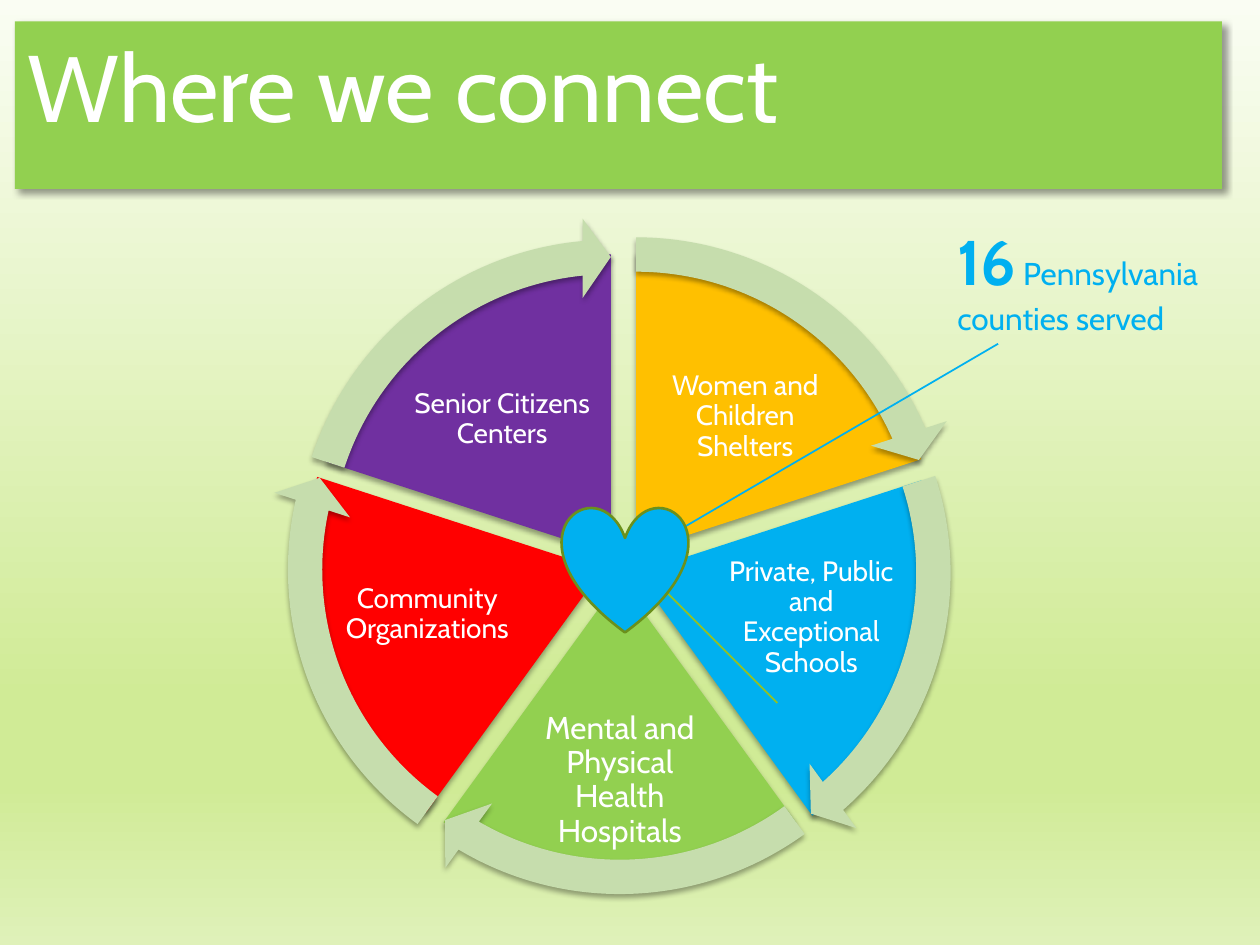
from dataclasses import dataclass

from lxml.etree import SubElement
from pptx import Presentation
from pptx.dml.color import RGBColor
from pptx.enum.shapes import MSO_CONNECTOR, MSO_SHAPE
from pptx.enum.text import MSO_ANCHOR, PP_ALIGN
from pptx.oxml.ns import qn
from pptx.util import Cm, Pt


@dataclass(frozen=True)
class Theme:
    font: str = "Cabin"
    white: str = "FFFFFF"
    green: str = "92D050"
    blue: str = "00B0F0"
    arrow: str = "C6DDAD"
    spoke: str = "90C226"
    heart_line: str = "6B901C"
    background: tuple = ((0, "FAFDF3"), (74, "D0EB96"), (83, "D0EB96"), (100, "DFF1B9"))
    title_size: int = 54
    number_size: int = 36
    text_size: int = 18
    label_size: int = 16


THEME = Theme()

# Segment offset, colour, label, label box and label size; lengths in cm within the wheel
SEGMENTS = [
    ((1.42, 0.71), "FFC000", "Women and Children Shelters",
     (7.72, 2.74, 3.89, 2.59), THEME.label_size),
    ((1.42, 1.14), THEME.blue, "Private, Public and Exceptional Schools",
     (9.19, 6.65, 3.61, 2.87), THEME.label_size),
    ((1.09, 1.27), THEME.green, "Mental and Physical Health Hospitals",
     (5.41, 9.78, 3.45, 3.18), THEME.text_size),
    ((0.74, 1.07), "FF0000", "Community Organizations",
     (1.45, 6.58, 3.61, 2.87), THEME.label_size),
    ((0.91, 0.76), "7030A0", "Senior Citizens Centers",
     (2.82, 2.79, 3.89, 2.59), THEME.label_size),
]
PIE_SIZE = 12.09
ARROW_MARGIN = 0.75
# Angles in the adjustment unit of the shapes: a full turn is 216
TURN = 216
TOP = 162
SWEEP = TURN / len(SEGMENTS)
HEAD_SWEEP = 3.275


def rgb(color):
    return RGBColor.from_string(color)


def style_run(r, size, color, bold=False):
    r.font.name = THEME.font
    r.font.size = Pt(size)
    r.font.bold = bold
    r.font.color.rgb = rgb(color)


def paint_background(s):
    fill = s.background.fill
    fill.gradient()
    fill.gradient_angle = 270
    stops = s.background._cSld.find(".//" + qn("a:gsLst"))
    stops.clear()
    for pos, color in THEME.background:
        stop = SubElement(stops, qn("a:gs"), pos=str(pos * 1000))
        SubElement(stop, qn("a:srgbClr"), val=color)


def add_shadow(sp, alpha, blur, distance, angle):
    sp.shadow.inherit = False
    effects = sp._element.spPr.find(qn("a:effectLst"))
    shadow = SubElement(effects, qn("a:outerShdw"), blurRad=str(Pt(blur)),
                        dist=str(Pt(distance)), dir=str(angle * 60000), rotWithShape="0")
    color = SubElement(shadow, qn("a:srgbClr"), val="000000")
    SubElement(color, qn("a:alpha"), val=str(alpha * 1000))


def add_filled(s, kind, left, top, size, color, adjustments=()):
    sp = s.shapes.add_shape(kind, Cm(left), Cm(top), Cm(size), Cm(size))
    for i, value in enumerate(adjustments):
        sp.adjustments[i] = value
    sp.fill.solid()
    sp.fill.fore_color.rgb = rgb(color)
    sp.line.fill.background()
    sp.shadow.inherit = False
    return sp


def add_line(s, x1, y1, x2, y2, color):
    line = s.shapes.add_connector(MSO_CONNECTOR.STRAIGHT, Cm(x1), Cm(y1), Cm(x2), Cm(y2))
    line.line.color.rgb = rgb(color)
    line.line.width = Pt(1)
    SubElement(line._element.spPr, qn("a:effectLst"))


def add_title(s, left, top, width, height):
    sp = s.shapes.title
    sp.left, sp.top, sp.width, sp.height = Cm(left), Cm(top), Cm(width), Cm(height)
    sp.fill.solid()
    sp.fill.fore_color.rgb = rgb(THEME.green)
    add_shadow(sp, 40, 4, 3, 45)
    tf = sp.text_frame
    tf.text = "Where we connect"
    tf.vertical_anchor = MSO_ANCHOR.TOP
    p = tf.paragraphs[0]
    p.alignment = PP_ALIGN.LEFT
    style_run(p.runs[0], THEME.title_size, THEME.white)


def add_label(s, left, top, width, height, text, size):
    tf = s.shapes.add_textbox(Cm(left), Cm(top), Cm(width), Cm(height)).text_frame
    tf.word_wrap = True
    tf.vertical_anchor = MSO_ANCHOR.MIDDLE
    tf.margin_left = tf.margin_right = tf.margin_top = tf.margin_bottom = Cm(0.05)
    tf.text = text
    p = tf.paragraphs[0]
    p.alignment = PP_ALIGN.CENTER
    p.line_spacing = 0.9
    style_run(p.runs[0], size, THEME.white)


def add_wheel(s, left, top):
    """Draw the segments with their labels, then the ring of arrows over them."""
    starts = [(TOP + i * SWEEP) % TURN for i in range(len(SEGMENTS))]
    for start, ((dx, dy), color, text, (x, y, w, h), size) in zip(starts, SEGMENTS):
        pie = add_filled(s, MSO_SHAPE.PIE, left + dx, top + dy, PIE_SIZE, color,
                         (start, (start + SWEEP) % TURN))
        add_shadow(pie, 35, 3, 2, 90)
        add_label(s, left + x, top + y, w, h, text, size)
    for start, ((dx, dy), *_) in zip(starts, SEGMENTS):
        end = (start + SWEEP - HEAD_SWEEP) % TURN
        arrow = add_filled(s, MSO_SHAPE.CIRCULAR_ARROW, left + dx - ARROW_MARGIN,
                           top + dy - ARROW_MARGIN, PIE_SIZE + 2 * ARROW_MARGIN,
                           THEME.arrow, (0.051, HEAD_SWEEP, end, start, 0.059))
        add_shadow(arrow, 35, 3, 2, 90)


def add_callout(s, left, top, width, height):
    add_line(s, left - 6.55, top + 7.01, left + 1.07, top + 2.56, THEME.blue)
    tf = s.shapes.add_textbox(Cm(left), Cm(top), Cm(width), Cm(height)).text_frame
    tf.word_wrap = True
    p = tf.paragraphs[0]
    for text, size, bold in (("16", THEME.number_size, True),
                             (" Pennsylvania counties served", THEME.text_size, False)):
        r = p.add_run()
        r.text = text
        style_run(r, size, THEME.blue, bold)


def add_heart(s, left, top, size):
    add_line(s, left + 1.8, top + 1.42, left + 4.34, top + 3.96, THEME.spoke)
    heart = add_filled(s, MSO_SHAPE.HEART, left, top, size, THEME.blue)
    heart.line.color.rgb = rgb(THEME.heart_line)
    heart.line.width = Pt(1.5)


def main():
    prs = Presentation()
    prs.slide_width, prs.slide_height = Cm(25.4), Cm(19.05)
    s = prs.slides.add_slide(prs.slide_layouts[5])
    paint_background(s)
    add_title(s, 0.3, 0.43, 24.33, 3.38)
    add_wheel(s, 5.36, 4.37)
    add_callout(s, 19.05, 4.37, 6.15, 2.57)
    add_heart(s, 11.33, 10.21, 2.54)
    prs.save("out.pptx")


if __name__ == "__main__":
    main()
